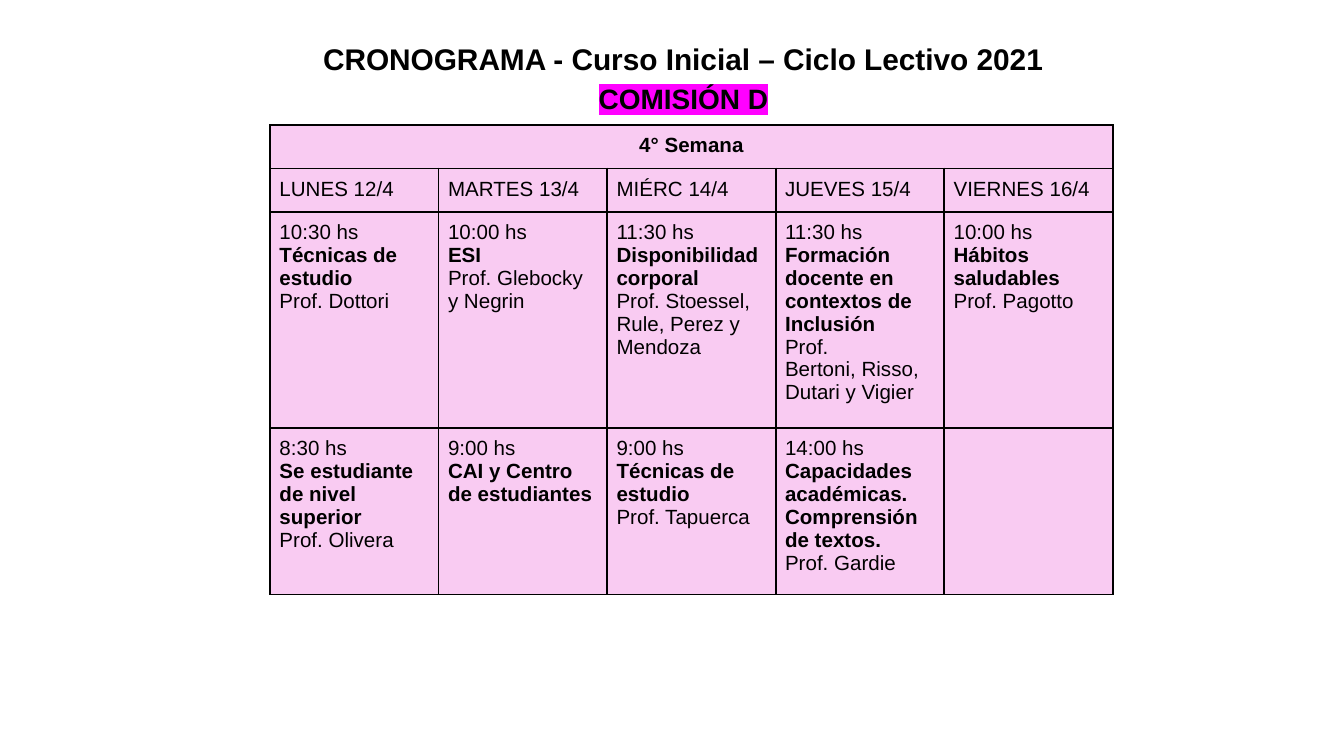
from lxml import etree
from pptx import Presentation
from pptx import util as u
from pptx.dml.color import RGBColor
from pptx.enum import text
from pptx.oxml.ns import qn

deck = Presentation()
deck.slide_width = u.Inches(10)
deck.slide_height = deck.slide_width * 9 // 16
W, H = deck.slide_width, deck.slide_height
slide = deck.slides.add_slide(deck.slide_layouts[5])


def paint(fill, color):
    fill.solid()
    fill.fore_color.rgb = RGBColor.from_string(color)


def write(paragraph, words, size, bold):
    run = paragraph.add_run()
    run.text = words
    run.font.name, run.font.size, run.font.bold = "Arial", u.Pt(size), bold
    paint(run.font.fill, "000000")
    return run


heading = slide.shapes.title
heading.left, heading.top = int(W * 0.194), int(W * 0.016)
heading.width, heading.height = int(W * 0.629), int(W * 0.08)
frame = heading.text_frame
frame.word_wrap = True
frame.auto_size = text.MSO_AUTO_SIZE.SHAPE_TO_FIT_TEXT
frame.vertical_anchor = text.MSO_ANCHOR.TOP
frame.margin_left = frame.margin_right = u.Inches(0.1)
frame.margin_top = frame.margin_bottom = u.Inches(0.1)
course, group = frame.paragraphs[0], frame.add_paragraph()
for line in (course, group):
    line.alignment = text.PP_ALIGN.CENTER
    line.line_spacing = 1.15
write(course, "CRONOGRAMA - Curso Inicial – Ciclo Lectivo 2021", 16, True)
commission = write(group, "COMISIÓN D", 15, True)
highlight = etree.Element(qn("a:highlight"))
etree.SubElement(highlight, qn("a:srgbClr"), val="FF00FF")
commission.font._element.find(qn("a:solidFill")).addnext(highlight)

week = [
    [["*4° Semana"], [], [], [], []],
    [["LUNES 12/4"], ["MARTES 13/4"], ["MIÉRC 14/4"], ["JUEVES 15/4"], ["VIERNES 16/4"]],
    [
        ["10:30 hs", "*Técnicas de estudio", "Prof. Dottori"],
        ["10:00 hs", "*ESI", "Prof. Glebocky", "y Negrin"],
        ["11:30 hs", "*Disponibilidad corporal", "Prof. Stoessel, Rule, Perez y Mendoza"],
        ["11:30 hs", "*Formación docente en contextos de Inclusión", "Prof.",
         "Bertoni, Risso, Dutari y Vigier"],
        ["10:00 hs", "*Hábitos saludables", "Prof. Pagotto"],
    ],
    [
        ["8:30 hs", "*Se estudiante de nivel superior", "Prof. Olivera"],
        ["9:00 hs", "*CAI y Centro de estudiantes"],
        ["9:00 hs", "*Técnicas de estudio", "Prof. Tapuerca"],
        ["14:00 hs", "*Capacidades académicas. Comprensión de textos.", "Prof. Gardie"],
        [],
    ],
]

timetable = slide.shapes.add_table(
    len(week), 5, int(W * 0.201), int(W * 0.093), int(W * 0.627), int(W * 0.349)
)
schedule = timetable.table
for row, height in zip(schedule.rows, (0.29, 0, 0, 0)):
    row.height = u.Inches(height)
timetable.height = int(W * 0.349)
schedule.cell(0, 0).merge(schedule.cell(0, 4))

for r, days in enumerate(week):
    for c, entries in enumerate(days):
        cell = schedule.cell(r, c)
        paint(cell.fill, "F9CBF2")
        cell.margin_left = cell.margin_right = u.Inches(0.07)
        cell.margin_top = cell.margin_bottom = u.Inches(0.07)
        for i, entry in enumerate(entries):
            line = cell.text_frame.paragraphs[0] if i == 0 else cell.text_frame.add_paragraph()
            write(line, entry.lstrip("*"), 11, entry.startswith("*"))
        for position, side in enumerate(("lnL", "lnR", "lnT", "lnB")):
            border = etree.Element(qn("a:" + side), w=str(u.Pt(1)))
            ink = etree.SubElement(border, qn("a:solidFill"))
            etree.SubElement(ink, qn("a:srgbClr"), val="000000")
            cell._tc.get_or_add_tcPr().insert(position, border)
schedule.cell(0, 0).text_frame.paragraphs[0].alignment = text.PP_ALIGN.CENTER

deck.save("out.pptx")
